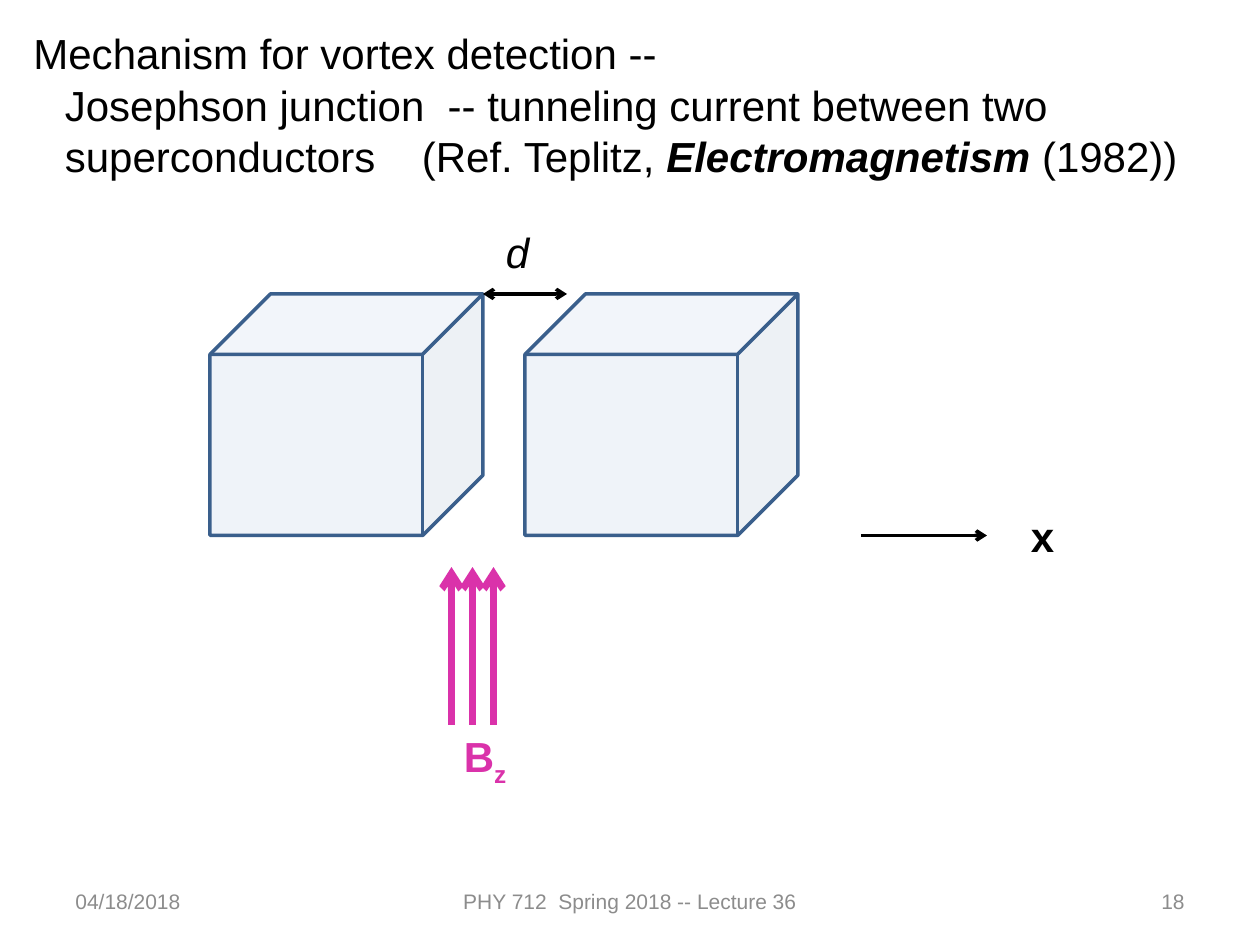
"""Build the Josephson junction slide for vortex detection."""
from lxml.etree import SubElement
from pptx import Presentation
from pptx.dml.color import RGBColor
from pptx.enum.shapes import MSO_CONNECTOR, MSO_SHAPE
from pptx.enum.text import MSO_ANCHOR, PP_ALIGN
from pptx.oxml.ns import qn
from pptx.util import Pt

COLORS = {
    "text": "000000",
    "footer": "8C8C8C",
    "cube": "4F81BD",
    "edge": "3A5F8C",
    "field": "DA32AA",
}

presentation = Presentation()
presentation.slide_width = Pt(720)
presentation.slide_height = Pt(540)
slide = presentation.slides.add_slide(presentation.slide_layouts[6])


def add_text(box, runs, color="text", size=24, align=PP_ALIGN.LEFT, anchor=MSO_ANCHOR.TOP):
    frame = slide.shapes.add_textbox(*map(Pt, box)).text_frame
    frame.word_wrap = True
    frame.vertical_anchor = anchor
    paragraph = frame.paragraphs[0]
    paragraph.alignment = align
    for text, emphasis in runs:
        run = paragraph.add_run()
        run.text = text
        run.font.color.rgb = RGBColor.from_string(COLORS[color])
        values = {"name": "Arial", "size": Pt(size), **emphasis}
        for name, value in values.items():
            setattr(run.font, name, value)
    return paragraph


def add_arrow(start, end, color="text", width=2, ends=("tailEnd",)):
    connector = slide.shapes.add_connector(MSO_CONNECTOR.STRAIGHT, *map(Pt, start + end))
    connector.line.width = Pt(width)
    connector.line.color.rgb = RGBColor.from_string(COLORS[color])
    for name in ends:
        SubElement(connector.line._get_or_add_ln(), qn(f"a:{name}"), type="arrow")
    SubElement(connector._element.spPr, qn("a:effectLst"))


footers = [
    (36, 168, "04/18/2018", PP_ALIGN.LEFT),
    (246, 228, "PHY 712  Spring 2018 -- Lecture 36", PP_ALIGN.CENTER),
    (516, 168, "18", PP_ALIGN.RIGHT),
]
for left, width, text, align in footers:
    add_text((left, 500.5, width, 28.75), [(text, {})], "footer", 12, align, MSO_ANCHOR.MIDDLE)

add_text((12, 12, 672, 36), [("Mechanism for vortex detection --", {})])
add_text((30, 42, 654, 65.4), [
    ("Josephson junction  -- tunneling current between two superconductors    (Ref. Teplitz, ", {}),
    ("Electromagnetism", {"bold": True, "italic": True}),
    (" (1982))", {}),
])

for left in (120, 300):
    cube = slide.shapes.add_shape(MSO_SHAPE.CUBE, Pt(left), Pt(168), Pt(156), Pt(138))
    cube.shadow.inherit = False
    cube.fill.solid()
    cube.fill.fore_color.rgb = RGBColor.from_string(COLORS["cube"])
    fill_color = cube._element.spPr.find(qn("a:solidFill"))[0]
    SubElement(fill_color, qn("a:alpha"), val="9000")
    cube.line.width = Pt(2)
    cube.line.color.rgb = RGBColor.from_string(COLORS["edge"])

add_arrow((276, 168), (324, 168), ends=("headEnd", "tailEnd"))
add_text((282, 126, 42, 36), [("d", {"italic": True})])

for x in (258, 270, 282):
    add_arrow((x, 414), (x, 324), "field", 4)
field_label = add_text((258, 414, 87, 36), [("B", {"bold": True}), ("z", {"bold": True})], "field")
field_label.runs[1].font._element.set("baseline", "-25000")

add_arrow((492, 306), (564, 306))
add_text((582, 288, 30, 36), [("x", {"bold": True})])

presentation.save("out.pptx")
